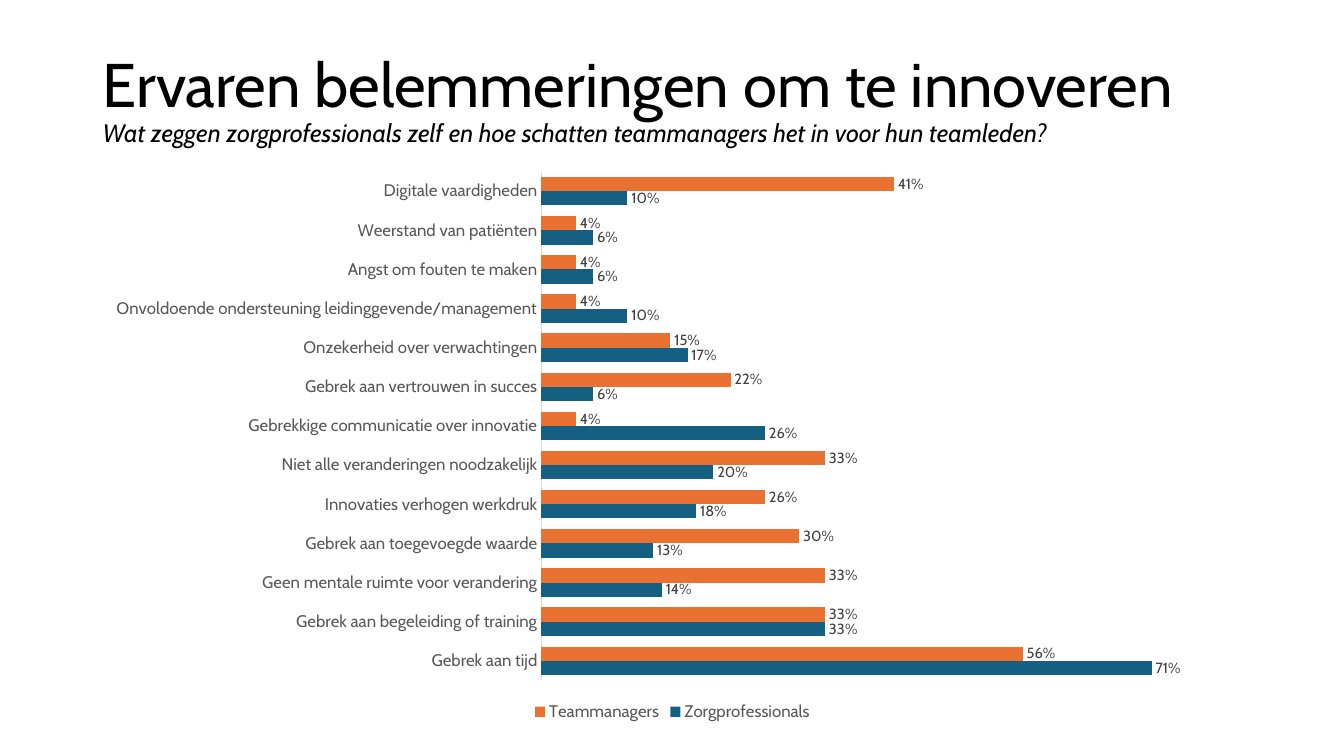
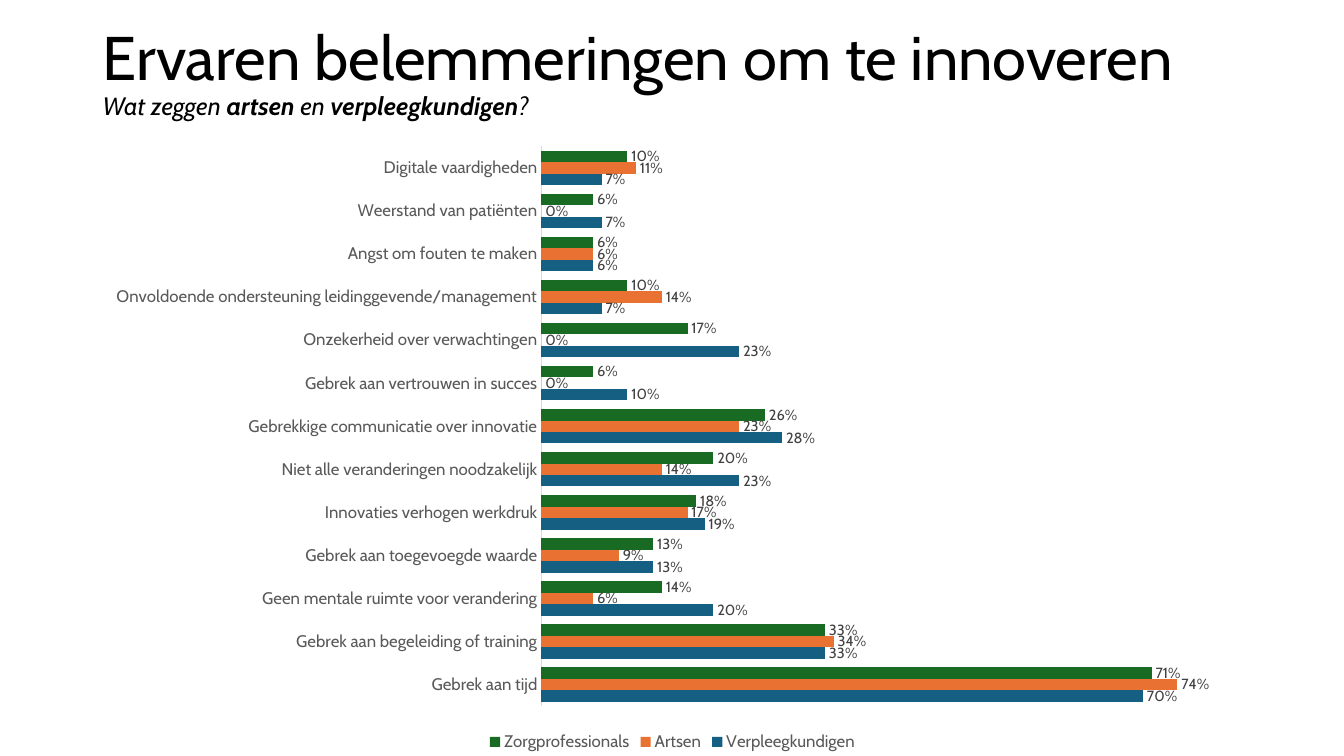
from lxml import etree
from pptx import Presentation
from pptx.chart.data import CategoryChartData
from pptx.dml.color import RGBColor
from pptx.enum.chart import XL_CHART_TYPE as ChartType
from pptx.enum.chart import XL_LABEL_POSITION as LabelPosition
from pptx.enum.chart import XL_LEGEND_POSITION as LegendPosition
from pptx.enum.chart import XL_TICK_MARK as TickMark
from pptx.enum.text import MSO_ANCHOR as Anchor
from pptx.oxml.ns import qn
from pptx.util import Inches, Pt

# Shared style
COLORS = {
    "black": "000000",
    "axis text": "595959",
    "label text": "404040",
    "axis line": "D9D9D9",
    "blue": "156082",
    "orange": "E97132",
    "green": "196B24",
}
FONT = "Cabin"
LEFT, WIDTH, TITLE_HEIGHT = 0.92, 11.5, 1.2
TITLE = "Ervaren belemmeringen om te innoveren"
PERCENT = "0%"

# Chart content, from the bottom bar upwards
CATEGORIES = [
    "Gebrek aan tijd",
    "Gebrek aan begeleiding of training",
    "Geen mentale ruimte voor verandering",
    "Gebrek aan toegevoegde waarde",
    "Innovaties verhogen werkdruk",
    "Niet alle veranderingen noodzakelijk",
    "Gebrekkige communicatie over innovatie",
    "Gebrek aan vertrouwen in succes",
    "Onzekerheid over verwachtingen",
    "Onvoldoende ondersteuning leidinggevende/management",
    "Angst om fouten te maken",
    "Weerstand van patiënten",
    "Digitale vaardigheden",
]
PERCENTAGES = {
    "Zorgprofessionals": [71, 33, 14, 13, 18, 20, 26, 6, 17, 10, 6, 6, 10],
    "Teammanagers": [56, 33, 33, 30, 26, 33, 4, 22, 15, 4, 4, 4, 41],
    "Verpleegkundigen": [70, 33, 20, 13, 19, 23, 28, 10, 23, 7, 6, 7, 7],
    "Artsen": [74, 34, 6, 9, 17, 14, 23, 0, 0, 14, 6, 0, 11],
}

# Each subtitle is a list of (text, bold) parts
SLIDES = [
    {
        "title top": 0.4,
        "subtitle": [("Wat zeggen zorgprofessionals zelf en hoe schatten "
                      "teammanagers het in voor hun teamleden?", False)],
        "chart top": 1.59,
        "chart height": 5.61,
        "series": {"Zorgprofessionals": "blue", "Teammanagers": "orange"},
    },
    {
        "title top": 0.14,
        "subtitle": [("Wat zeggen ", False), ("artsen", True), (" en ", False),
                     ("verpleegkundigen", True), ("?", False)],
        "chart top": 1.33,
        "chart height": 6.17,
        "series": {"Verpleegkundigen": "blue", "Artsen": "orange",
                   "Zorgprofessionals": "green"},
    },
]


def rgb(name):
    return RGBColor.from_string(COLORS[name])


def set_all(target, values):
    for name, value in values.items():
        setattr(target, name, value)


def set_font(font, size, color, **values):
    set_all(font, {"name": FONT, "size": Pt(size), **values})
    font.color.rgb = rgb(color)


def add_title(slide, top, subtitle):
    box = slide.shapes.add_textbox(
        Inches(LEFT), Inches(top), Inches(WIDTH), Inches(TITLE_HEIGHT))
    set_all(box.text_frame,
            {"word_wrap": True, "vertical_anchor": Anchor.MIDDLE})
    paragraph = box.text_frame.paragraphs[0]
    paragraph.line_spacing = 0.9
    heading = paragraph.add_run()
    heading.text = TITLE
    set_font(heading.font, 44, "black")
    paragraph.add_line_break()
    for text, bold in subtitle:
        run = paragraph.add_run()
        run.text = text
        set_font(run.font, 18, "black", italic=True, bold=bold)


def place_plot(chart, **fractions):
    """Fix the inner plot area as fractions of the chart."""
    plot_area = chart._chartSpace.chart.plotArea
    for old in plot_area.findall(qn("c:layout")):
        plot_area.remove(old)
    layout = etree.Element(qn("c:layout"))
    manual = etree.SubElement(layout, qn("c:manualLayout"))
    settings = {"layoutTarget": "inner", "xMode": "edge", "yMode": "edge",
                **fractions}
    for name, value in settings.items():
        etree.SubElement(manual, qn(f"c:{name}")).set("val", str(value))
    plot_area.insert(0, layout)


def format_axes(chart):
    category_axis = chart.category_axis
    set_all(category_axis, {"major_tick_mark": TickMark.NONE,
                            "minor_tick_mark": TickMark.NONE,
                            "has_major_gridlines": False})
    set_font(category_axis.tick_labels.font, 12, "axis text")
    category_axis.format.line.color.rgb = rgb("axis line")
    category_axis.format.line.width = Pt(0.75)
    set_all(chart.value_axis, {"visible": False, "has_major_gridlines": False,
                               "minimum_scale": 0, "maximum_scale": 0.8})


def format_series(series, color):
    series.format.fill.solid()
    series.format.fill.fore_color.rgb = rgb(color)
    series.invert_if_negative = False
    labels = series.data_labels
    set_all(labels, {"show_value": True, "number_format": PERCENT,
                     "number_format_is_linked": False,
                     "position": LabelPosition.OUTSIDE_END})
    set_font(labels.font, 10.5, "label text")


def add_bar_chart(slide, top, height, series_colors):
    data = CategoryChartData(number_format=PERCENT)
    data.categories = CATEGORIES
    for name in series_colors:
        data.add_series(name, [value / 100 for value in PERCENTAGES[name]])
    chart = slide.shapes.add_chart(
        ChartType.BAR_CLUSTERED, Inches(LEFT), Inches(top),
        Inches(WIDTH), Inches(height), data).chart
    set_all(chart, {"has_title": False, "has_legend": True})
    set_font(chart.font, 10, "black")
    set_all(chart.legend, {"position": LegendPosition.BOTTOM,
                           "include_in_layout": False})
    set_font(chart.legend.font, 12, "axis text")
    set_all(chart.plots[0],
            {"gap_width": 75, "overlap": 0, "vary_by_categories": False})
    format_axes(chart)
    for series in chart.plots[0].series:
        format_series(series, series_colors[series.name])
    place_plot(chart, x=0.387, y=0.02, w=0.593, h=0.9)


def main():
    presentation = Presentation()
    set_all(presentation, {"slide_width": Inches(13.33),
                           "slide_height": Inches(7.5)})
    for content in SLIDES:
        slide = presentation.slides.add_slide(presentation.slide_layouts[6])
        add_title(slide, content["title top"], content["subtitle"])
        add_bar_chart(slide, content["chart top"], content["chart height"],
                      content["series"])
    presentation.save("out.pptx")


if __name__ == "__main__":
    main()
